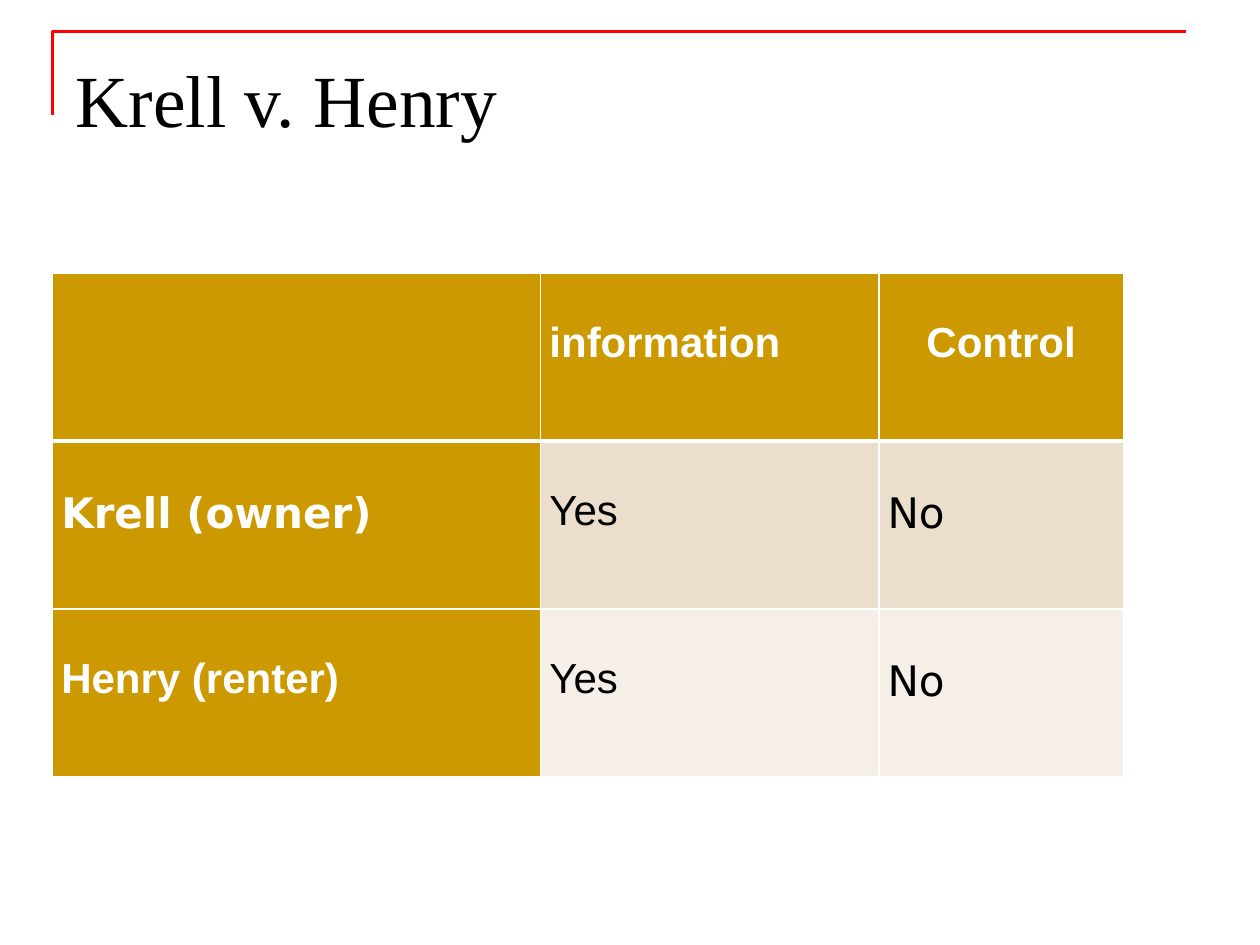
from dataclasses import dataclass

from lxml import etree
from pptx import Presentation
from pptx.dml.color import RGBColor
from pptx.enum.text import MSO_ANCHOR, PP_ALIGN
from pptx.oxml.ns import qn
from pptx.util import Inches, Pt

TOP = MSO_ANCHOR.TOP
LEFT, CENTER = PP_ALIGN.LEFT, PP_ALIGN.CENTER
UNIT = Inches(1) / 12


@dataclass(frozen=True)
class Theme:
    ink: str = "000000"
    paper: str = "FFFFFF"
    rule: str = "FF0000"
    gold: str = "CC9900"
    bands: tuple = ("ECDECC", "F6EFE7")
    serif: str = "Times New Roman"
    sans: str = "Arial"
    alternate: str = "DejaVu Sans"
    title_size: float = 42
    table_size: float = 24
    rule_width: float = 1.5
    border: float = 1
    header_border: float = 3


def grid(units):
    return round(units * UNIT)


class SlideBuilder:
    def __init__(self, slide, theme):
        self.slide = slide
        self.theme = theme

    def add_text(self, paragraph, text, font, size, color, bold=False):
        run = paragraph.add_run()
        run.text = text
        run.font.name = font
        run.font.size = Pt(size)
        run.font.bold = bold
        run.font.color.rgb = RGBColor.from_string(color)

    def corner_rule(self, points):
        start, *rest = [(grid(x), grid(y)) for x, y in points]
        outline = self.slide.shapes.build_freeform(*start)
        outline.add_line_segments(rest, close=False)
        corner = outline.convert_to_shape()
        corner.shadow.inherit = False
        corner.fill.background()
        corner.line.color.rgb = RGBColor.from_string(self.theme.rule)
        corner.line.width = Pt(self.theme.rule_width)

    def title(self, text, left, top, width, height):
        heading = self.slide.shapes.title
        heading.left, heading.top = grid(left), grid(top)
        heading.width, heading.height = grid(width), grid(height)
        frame = heading.text_frame
        frame.word_wrap = True
        frame.vertical_anchor = TOP
        frame.margin_top = Inches(0.13)
        paragraph = frame.paragraphs[0]
        paragraph.alignment = LEFT
        self.add_text(paragraph, text, self.theme.serif,
                      self.theme.title_size, self.theme.ink)

    def borders(self, cell, bottom):
        properties = cell._tc.get_or_add_tcPr()
        widths = {"lnL": self.theme.border, "lnR": self.theme.border,
                  "lnT": self.theme.border, "lnB": bottom}
        for position, (side, width) in enumerate(widths.items()):
            edge = etree.Element(qn(f"a:{side}"), w=str(int(Pt(width))))
            fill = etree.SubElement(edge, qn("a:solidFill"))
            etree.SubElement(fill, qn("a:srgbClr"), val=self.theme.paper)
            properties.insert(position, edge)

    def cell(self, cell, text, font, fill, is_label, align, bottom):
        cell.fill.solid()
        cell.fill.fore_color.rgb = RGBColor.from_string(fill)
        self.borders(cell, bottom)
        cell.margin_left = cell.margin_right = Inches(0.07)
        cell.margin_top = cell.margin_bottom = 0
        if text:
            paragraph = cell.text_frame.paragraphs[0]
            paragraph.alignment = align
            paragraph.line_spacing = 2.0
            color = self.theme.paper if is_label else self.theme.ink
            self.add_text(paragraph, text, font, self.theme.table_size, color, is_label)

    def table(self, entries, left, top, widths, row_height):
        table = self.slide.shapes.add_table(
            len(entries), len(widths), grid(left), grid(top),
            grid(sum(widths)), grid(row_height * len(entries))).table
        for column, width in zip(table.columns, widths):
            column.width = grid(width)
        for r, row in enumerate(entries):
            table.rows[r].height = grid(row_height)
            for c, (text, font) in enumerate(row):
                is_label = r == 0 or c == 0
                fill = self.theme.gold if is_label else self.theme.bands[r - 1]
                align = CENTER if (r, c) == (0, 2) else LEFT
                bottom = self.theme.border if r else self.theme.header_border
                self.cell(table.cell(r, c), text, font, fill, is_label, align, bottom)


def main():
    theme = Theme()
    presentation = Presentation()
    presentation.slide_width, presentation.slide_height = Inches(10), Inches(7.5)
    slide = presentation.slides.add_slide(presentation.slide_layouts[5])
    builder = SlideBuilder(slide, theme)

    builder.corner_rule([(5, 11), (5, 3), (113, 3)])
    builder.title("Krell v. Henry", 6, 3.6, 108, 15)
    sans, alternate = theme.sans, theme.alternate
    builder.table([
        [("", sans), ("information", sans), ("Control", sans)],
        [("Krell (owner)", alternate), ("Yes", sans), ("No", alternate)],
        [("Henry (renter)", sans), ("Yes", sans), ("No", alternate)],
    ], left=5, top=26, widths=(46.5, 32.2, 23.3), row_height=16)

    presentation.save("out.pptx")


if __name__ == "__main__":
    main()
